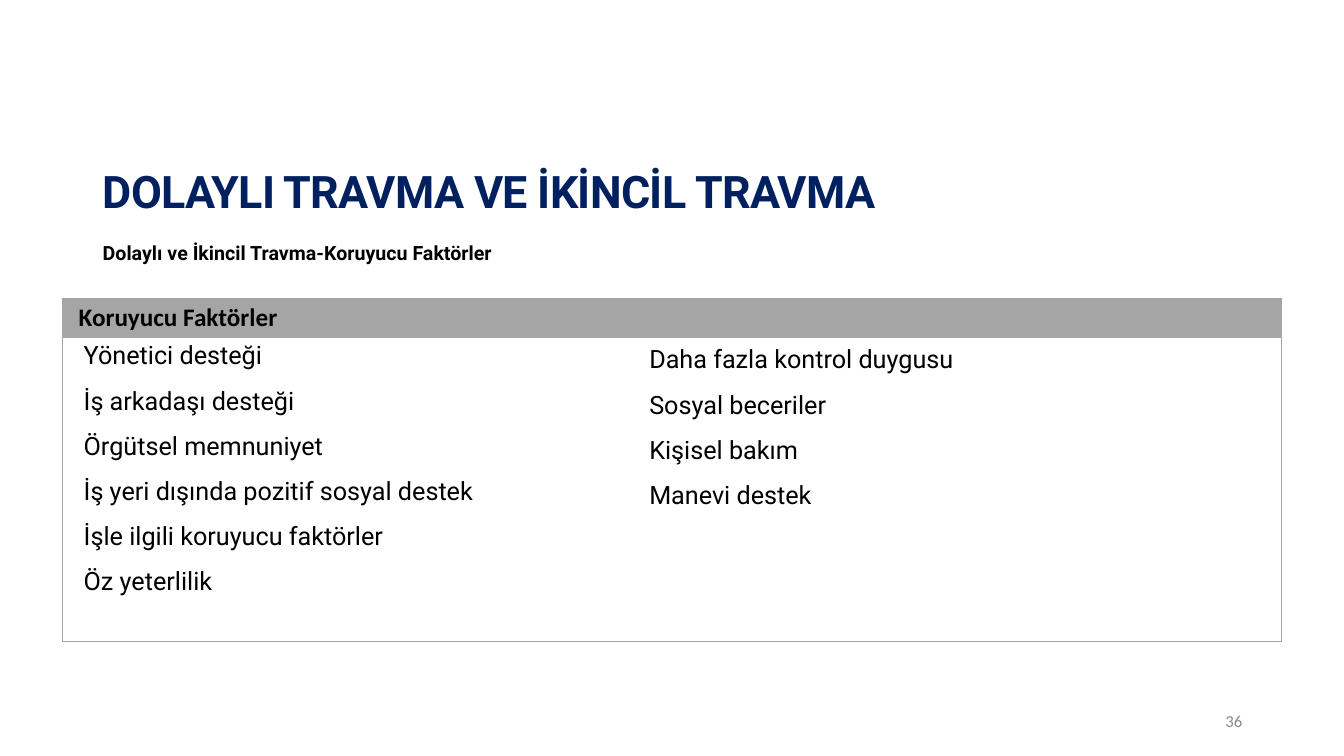
from dataclasses import dataclass

from lxml import etree
from pptx import Presentation
from pptx.dml import color
from pptx.enum import text
from pptx.oxml import ns
from pptx.util import Inches, Pt

GREY = "A5A5A5"
BLACK = "000000"


@dataclass
class Label:
    wording: str
    place: tuple[float, float, float, float]
    size: int
    font: str
    colour: str
    bold: bool
    align: text.PP_ALIGN = text.PP_ALIGN.LEFT
    line_spacing: float = 1.0
    tracking: int = 0


@dataclass
class CellContent:
    row: int
    column: int
    lines: list[str]
    font: str
    bold: bool
    margins: tuple[float, float]
    indent: float
    line_spacing: float
    fill: str | None
    edges: str


LABELS = [
    Label("DOLAYLI TRAVMA VE İKİNCİL TRAVMA", (0.92, 1.2, 11.5, 1.45), 32,
          "Roboto", "002060", True, line_spacing=0.9, tracking=-50),
    Label("36", (9.42, 6.95, 3, 0.4), 12, "Calibri", "8C8C8C", False,
          text.PP_ALIGN.RIGHT),
    Label("Dolaylı ve İkincil Travma-Koruyucu Faktörler", (0.92, 2.34, 10.57, 0.34),
          14, "Roboto", BLACK, True, text.PP_ALIGN.JUSTIFY),
]

WORK_FACTORS = [
    "Yönetici desteği",
    "İş arkadaşı desteği",
    "Örgütsel memnuniyet",
    "İş yeri dışında pozitif sosyal destek",
    "İşle ilgili koruyucu faktörler",
    "Öz yeterlilik",
]
PERSONAL_FACTORS = [
    "Daha fazla kontrol duygusu",
    "Sosyal beceriler",
    "Kişisel bakım",
    "Manevi destek",
]

CELLS = [
    CellContent(0, 0, ["Koruyucu Faktörler"], "Calibri", True, (0.04, 0.04), 0.12, 1.0, GREY, "LT"),
    CellContent(0, 1, [""], "Calibri", True, (0.04, 0.04), 0, 1.0, GREY, "RT"),
    CellContent(1, 0, WORK_FACTORS, "Roboto", False, (0.1, 0), 0.11, 1.15, None, "LTB"),
    CellContent(1, 1, PERSONAL_FACTORS, "Roboto", False, (0.04, 0.04), 0.11, 1.15, None, "RTB"),
]
COLUMN_WIDTHS = [5.67, 6.42]
ROW_HEIGHTS = [0.38, 3.02]


def rgb(value: str) -> color.RGBColor:
    return color.RGBColor.from_string(value)


def style_font(font, name: str, size: int, colour: str, bold: bool) -> None:
    font.name = name
    font.size = Pt(size)
    font.bold = bold
    font.color.rgb = rgb(colour)


def draw_label(page, label: Label) -> None:
    box = page.shapes.add_textbox(*(Inches(length) for length in label.place))
    frame = box.text_frame
    frame.word_wrap = True
    frame.vertical_anchor = text.MSO_ANCHOR.MIDDLE
    frame.text = label.wording
    para = frame.paragraphs[0]
    para.alignment = label.align
    para.line_spacing = label.line_spacing
    span = para.runs[0]
    style_font(span.font, label.font, label.size, label.colour, label.bold)
    if label.tracking:
        span._r.get_or_add_rPr().set("spc", str(label.tracking))


def draw_borders(cell, edges: str) -> None:
    properties = cell._tc.get_or_add_tcPr()
    for edge in "LRTB":
        line = etree.SubElement(properties, ns.qn(f"a:ln{edge}"), w=str(Pt(0.5)))
        if edge in edges:
            fill = etree.SubElement(line, ns.qn("a:solidFill"))
            etree.SubElement(fill, ns.qn("a:srgbClr"), val=GREY)
        else:
            etree.SubElement(line, ns.qn("a:noFill"))


def fill_cell(cell, content: CellContent) -> None:
    side, vertical = content.margins
    cell.margin_left = cell.margin_right = Inches(side)
    cell.margin_top = cell.margin_bottom = Inches(vertical)
    draw_borders(cell, content.edges)
    if content.fill:
        cell.fill.solid()
        cell.fill.fore_color.rgb = rgb(content.fill)
    else:
        cell.fill.background()
    cell.text_frame.text = "\n".join(content.lines)
    for para in cell.text_frame.paragraphs:
        para.line_spacing = content.line_spacing
        para.space_after = Pt(8)
        properties = para._p.get_or_add_pPr()
        properties.set("marL", str(Inches(content.indent)))
        properties.set("indent", "0")
        for span in para.runs:
            style_font(span.font, content.font, 18, BLACK, content.bold)


def draw_factor_table(page) -> None:
    table = page.shapes.add_table(
        len(ROW_HEIGHTS), len(COLUMN_WIDTHS), Inches(0.62), Inches(2.96),
        Inches(sum(COLUMN_WIDTHS)), Inches(sum(ROW_HEIGHTS))).table
    table.horz_banding = False
    for column, width in zip(table.columns, COLUMN_WIDTHS):
        column.width = Inches(width)
    for row, height in zip(table.rows, ROW_HEIGHTS):
        row.height = Inches(height)
    for content in CELLS:
        fill_cell(table.cell(content.row, content.column), content)


def main() -> None:
    deck = Presentation()
    deck.slide_width = Inches(13.33)
    deck.slide_height = Inches(7.5)
    page = deck.slides.add_slide(deck.slide_layouts[6])
    draw_factor_table(page)
    for label in LABELS:
        draw_label(page, label)
    deck.save("out.pptx")


if __name__ == "__main__":
    main()
